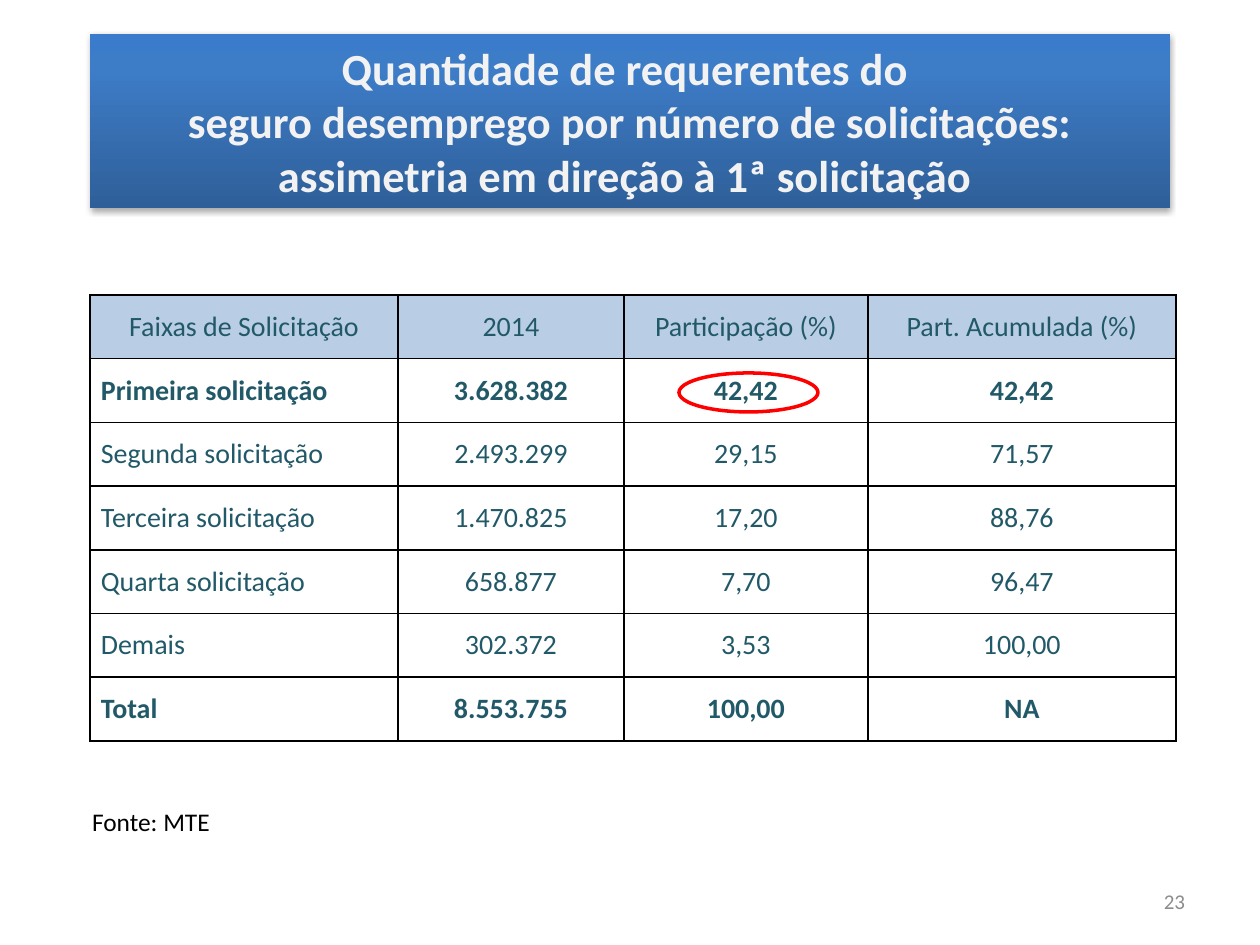
from lxml.etree import SubElement
from pptx import Presentation
from pptx.dml.color import RGBColor
from pptx.enum.shapes import MSO_SHAPE
from pptx.enum.text import MSO_ANCHOR, MSO_AUTO_SIZE, PP_ALIGN
from pptx.oxml import parse_xml
from pptx.oxml.ns import nsdecls, qn
from pptx.util import Emu, Pt

PIXELS_PER_INCH = 126
FONT = "Calibri"
COLUMN_WIDTHS = (308, 226, 244, 308)
TABLE_HEIGHT = 446
BOLD_ROWS = ("Primeira solicitação", "Total")
ROWS = (
    ("Faixas de Solicitação", "2014", "Participação (%)", "Part. Acumulada (%)"),
    ("Primeira solicitação", "3.628.382", "42,42", "42,42"),
    ("Segunda solicitação", "2.493.299", "29,15", "71,57"),
    ("Terceira solicitação", "1.470.825", "17,20", "88,76"),
    ("Quarta solicitação", "658.877", "7,70", "96,47"),
    ("Demais", "302.372", "3,53", "100,00"),
    ("Total", "8.553.755", "100,00", "NA"),
)


def px(length):
    """Turn pixels into EMU."""
    return Emu(round(length * 914400 / PIXELS_PER_INCH))


def color(value):
    """Turn a hex string into a colour."""
    return RGBColor.from_string(value)


def add_run(paragraph, text, size, hex_color, bold=False):
    """Add one formatted run to a paragraph."""
    run = paragraph.add_run()
    run.text = text
    run.font.name = FONT
    run.font.size = Pt(size)
    run.font.bold = bold
    run.font.color.rgb = color(hex_color)


def set_gradient(shape, stops, angle):
    """Fill a shape with a linear gradient of (position, colour) stops."""
    shape.fill.gradient()
    shape.fill.gradient_angle = angle
    stop_list = shape._element.spPr.find(".//" + qn("a:gsLst"))
    stop_list.clear()
    for position, value in stops:
        stop = SubElement(stop_list, qn("a:gs"), pos=str(position * 1000))
        SubElement(stop, qn("a:srgbClr"), val=value)


def set_shadow(shape, blur, distance, opacity):
    """Give a shape a black shadow that falls straight down."""
    shape.shadow.inherit = False
    effects = shape._element.spPr.find(qn("a:effectLst"))
    shadow = SubElement(effects, qn("a:outerShdw"), blurRad=str(Pt(blur)),
                        dist=str(Pt(distance)), dir="5400000", rotWithShape="0")
    black = SubElement(shadow, qn("a:srgbClr"), val="000000")
    SubElement(black, qn("a:alpha"), val=str(opacity * 1000))


def add_title(slide, lines):
    """Add the shaded title banner."""
    banner = slide.shapes.add_shape(MSO_SHAPE.RECTANGLE, px(90), px(34), px(1080), px(174))
    set_gradient(banner, ((0, "2F5F99"), (80, "3D7CC7"), (100, "3A7CCB")), 90)
    banner.line.fill.background()
    set_shadow(banner, 3.1, 1.8, 35)
    frame = banner.text_frame
    frame.word_wrap = True
    frame.auto_size = MSO_AUTO_SIZE.SHAPE_TO_FIT_TEXT
    frame.vertical_anchor = MSO_ANCHOR.MIDDLE
    paragraph = frame.paragraphs[0]
    paragraph.alignment = PP_ALIGN.CENTER
    for index, line in enumerate(lines):
        if index:
            paragraph.add_line_break()
        add_run(paragraph, line, 25.4, "F2F2F2", True)


def set_borders(cell):
    """Draw a thin black line on every side of a cell."""
    properties = cell._tc.get_or_add_tcPr()
    for index, side in enumerate(("lnL", "lnR", "lnT", "lnB")):
        properties.insert(index, parse_xml(
            f'<a:{side} {nsdecls("a")} w="{Pt(1)}"><a:solidFill>'
            f'<a:srgbClr val="000000"/></a:solidFill></a:{side}>'))


def fill_cell(cell, text, is_header, is_label, bold):
    """Write and format one table cell."""
    if is_header:
        cell.fill.solid()
        cell.fill.fore_color.rgb = color("B9CDE5")
    else:
        cell.fill.background()
    set_borders(cell)
    cell.vertical_anchor = MSO_ANCHOR.MIDDLE
    cell.margin_left = cell.margin_right = px(11)
    cell.margin_top = cell.margin_bottom = px(6)
    paragraph = cell.text_frame.paragraphs[0]
    paragraph.alignment = PP_ALIGN.LEFT if is_label else PP_ALIGN.CENTER
    add_run(paragraph, text, 16, "215968", bold)


def add_requests_table(slide):
    """Add the table of applicants by number of requests."""
    frame = slide.shapes.add_table(len(ROWS), len(COLUMN_WIDTHS), px(90), px(295),
                                   px(sum(COLUMN_WIDTHS)), px(TABLE_HEIGHT))
    table = frame.table
    table.first_row = table.horz_banding = False
    for column, width in zip(table.columns, COLUMN_WIDTHS):
        column.width = px(width)
    for row_index, values in enumerate(ROWS):
        table.rows[row_index].height = px(TABLE_HEIGHT / len(ROWS))
        is_header = row_index == 0
        for column_index, text in enumerate(values):
            is_label = column_index == 0 and not is_header
            fill_cell(table.cell(row_index, column_index), text, is_header, is_label,
                      values[0] in BOLD_ROWS)


def add_text(slide, box, text, size, hex_color, alignment, anchor):
    """Add a single-line text box."""
    frame = slide.shapes.add_textbox(*map(px, box)).text_frame
    frame.word_wrap = True
    frame.vertical_anchor = anchor
    frame.margin_left = frame.margin_right = px(12)
    paragraph = frame.paragraphs[0]
    paragraph.alignment = alignment
    add_run(paragraph, text, size, hex_color)


def add_highlight(slide):
    """Ring the share of first requests in red."""
    ring = slide.shapes.add_shape(MSO_SHAPE.OVAL, px(679), px(373), px(139), px(39))
    ring.shadow.inherit = False
    ring.fill.background()
    ring.line.color.rgb = color("FF0000")
    ring.line.width = Pt(2)


def main():
    """Build and save the slide."""
    presentation = Presentation()
    presentation.slide_width = px(1260)
    presentation.slide_height = px(945)
    slide = presentation.slides.add_slide(presentation.slide_layouts[6])
    add_requests_table(slide)
    add_text(slide, (80, 800, 436, 45), "Fonte: MTE", 14.5, "000000",
             PP_ALIGN.LEFT, MSO_ANCHOR.TOP)
    add_title(slide, ("Quantidade de requerentes do ",
                      "seguro desemprego por número de solicitações: "
                      "assimetria em direção à 1ª solicitação "))
    add_text(slide, (903, 876, 294, 50), "23", 12, "8C8C8C",
             PP_ALIGN.RIGHT, MSO_ANCHOR.MIDDLE)
    add_highlight(slide)
    presentation.save("out.pptx")


if __name__ == "__main__":
    main()
